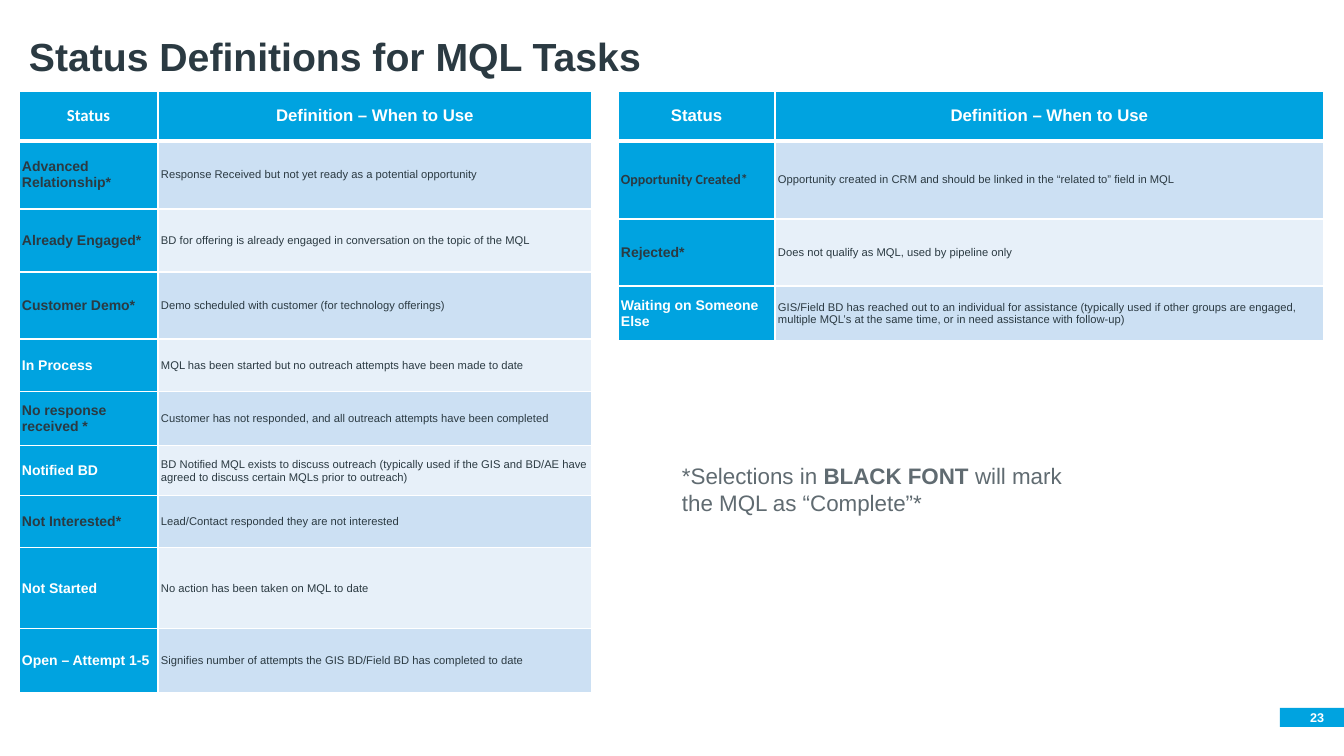
from lxml import etree
from pptx import Presentation
from pptx import util as u
from pptx.dml.color import RGBColor
from pptx.enum import shapes, text
from pptx.oxml.ns import qn

EMU_PER_PX = 914400 / 100.8
COLORS = {
    "blue": "00A3E0", "ink": "2B3A42", "gray": "606B71", "white": "FFFFFF",
    "band_dark": "CCE0F3", "band_light": "E7F0F9",
}
LEFT, CENTER, RIGHT = text.PP_ALIGN.LEFT, text.PP_ALIGN.CENTER, text.PP_ALIGN.RIGHT
MIDDLE, TOP, BOTTOM = text.MSO_ANCHOR.MIDDLE, text.MSO_ANCHOR.TOP, text.MSO_ANCHOR.BOTTOM

# Each row: status, definition, row height
LEFT_ROWS = [
    ("Advanced Relationship*", "Response Received but not yet ready as a potential opportunity", 68),
    ("Already Engaged*", "BD for offering is already engaged in conversation on the topic of the MQL", 63),
    ("Customer Demo*", "Demo scheduled with customer (for technology offerings)", 67),
    ("In Process", "MQL has been started but no outreach attempts have been made to date", 53),
    ("No response received *", "Customer has not responded, and all outreach attempts have been completed", 54),
    ("Notified BD", "BD Notified MQL exists to discuss outreach (typically used if the GIS and BD/AE "
     "have agreed to discuss certain MQLs prior to outreach)", 50),
    ("Not Interested*", "Lead/Contact responded they are not interested", 52),
    ("Not Started", "No action has been taken on MQL to date", 81),
    ("Open – Attempt 1-5", "Signifies number of attempts the GIS BD/Field BD has completed to date", 64),
]
RIGHT_ROWS = [
    ("Opportunity Created*", "Opportunity created in CRM and should be linked in the “related to” field in MQL", 78),
    ("Rejected*", "Does not qualify as MQL, used by pipeline only", 67),
    ("Waiting on Someone Else", "GIS/Field BD has reached out to an individual for assistance (typically used if "
     "other groups are engaged, multiple MQL’s at the same time, or in need assistance with follow-up)", 55),
]


def px(n):
    return u.Emu(round(n * EMU_PER_PX))


def rgb(name):
    return RGBColor.from_string(COLORS[name])


class SlideBuilder:
    font = "Arial"
    header_height = 50

    def __init__(self, prs):
        self.slide = prs.slides.add_slide(prs.slide_layouts[6])

    def add_runs(self, p, runs, size, color, align=LEFT, font=None):
        """Fill a paragraph with (text, bold) runs."""
        p.alignment = align
        for words, bold in runs:
            r = p.add_run()
            r.text = words
            r.font.name = font or self.font
            r.font.size = u.Pt(size)
            r.font.bold = bold
            r.font.color.rgb = rgb(color)

    def rect(self, x, y, w, h, color):
        sp = self.slide.shapes.add_shape(shapes.MSO_SHAPE.RECTANGLE, px(x), px(y), px(w), px(h))
        sp.shadow.inherit = False
        sp.fill.solid()
        sp.fill.fore_color.rgb = rgb(color)
        sp.line.fill.background()

    def text_box(self, x, y, w, h, runs, size, color, align=LEFT, anchor=TOP,
                 inset=(10, 5), spacing=1.0):
        tf = self.slide.shapes.add_textbox(px(x), px(y), px(w), px(h)).text_frame
        tf.word_wrap = True
        tf.vertical_anchor = anchor
        tf.margin_left = tf.margin_right = px(inset[0])
        tf.margin_top = tf.margin_bottom = px(inset[1])
        p = tf.paragraphs[0]
        p.line_spacing = spacing
        self.add_runs(p, runs, size, color, align)

    def borders(self, cell, top, bottom):
        """Draw white cell borders; top and bottom widths are in points."""
        tc_pr = cell._tc.get_or_add_tcPr()
        for side, width in (("L", 1), ("R", 1), ("T", top), ("B", bottom)):
            ln = etree.SubElement(tc_pr, qn(f"a:ln{side}"), w=str(u.Pt(width)))
            fill = etree.SubElement(ln, qn("a:solidFill"))
            etree.SubElement(fill, qn("a:srgbClr"), val=COLORS["white"])

    def cell(self, cell, words, fill, size, color, bold, align=LEFT, font=None):
        cell.margin_left = cell.margin_right = px(3)
        cell.margin_top = cell.margin_bottom = 0
        cell.vertical_anchor = MIDDLE
        cell.fill.solid()
        cell.fill.fore_color.rgb = rgb(fill)
        self.add_runs(cell.text_frame.paragraphs[0], [(words, bold)], size, color, align, font)

    def status_table(self, x, y, widths, rows, calibri):
        """Statuses ending in * are dark; those listed in calibri use that font."""
        heights = [self.header_height] + [row[2] for row in rows]
        frame = self.slide.shapes.add_table(len(heights), 2, px(x), px(y),
                                            px(sum(widths)), px(sum(heights)))
        table = frame.table
        for column, width in zip(table.columns, widths):
            column.width = px(width)
        for i, height in enumerate(heights):
            table.rows[i].height = px(height)
            for cell in table.rows[i].cells:
                self.borders(cell, top=3 if i == 1 else 1, bottom=3 if i == 0 else 1)
        for j, heading in enumerate(("Status", "Definition – When to Use")):
            self.cell(table.cell(0, j), heading, "blue", 12, "white", True, CENTER,
                      "Calibri" if heading in calibri else None)
        for i, (status, definition, _) in enumerate(rows, 1):
            self.cell(table.cell(i, 0), status, "blue", 10,
                      "ink" if status.endswith("*") else "white", True,
                      font="Calibri" if status in calibri else None)
            self.cell(table.cell(i, 1), definition,
                      "band_dark" if i % 2 else "band_light", 8, "ink", False)


def main():
    prs = Presentation()
    prs.slide_width, prs.slide_height = px(1344), px(756)
    s = SlideBuilder(prs)
    s.rect(1280, 708, 64, 19, "blue")
    s.text_box(1280, 708, 44, 19, [("23", True)], 9, "white", RIGHT, MIDDLE, (0, 0))
    s.text_box(19, 0, 1250, 85, [("Status Definitions for MQL Tasks", True)], 28, "ink",
               anchor=BOTTOM, spacing=0.9)
    s.status_table(618, 91, (157, 549), RIGHT_ROWS, calibri=["Opportunity Created*"])
    s.status_table(19, 91, (139, 434), LEFT_ROWS, calibri=["Status"])
    s.text_box(672, 457, 408, 65, [("*Selections in ", False), ("BLACK FONT ", True),
                                   ("will mark the MQL as “Complete”*", False)], 16, "gray")
    prs.save("out.pptx")


if __name__ == "__main__":
    main()
